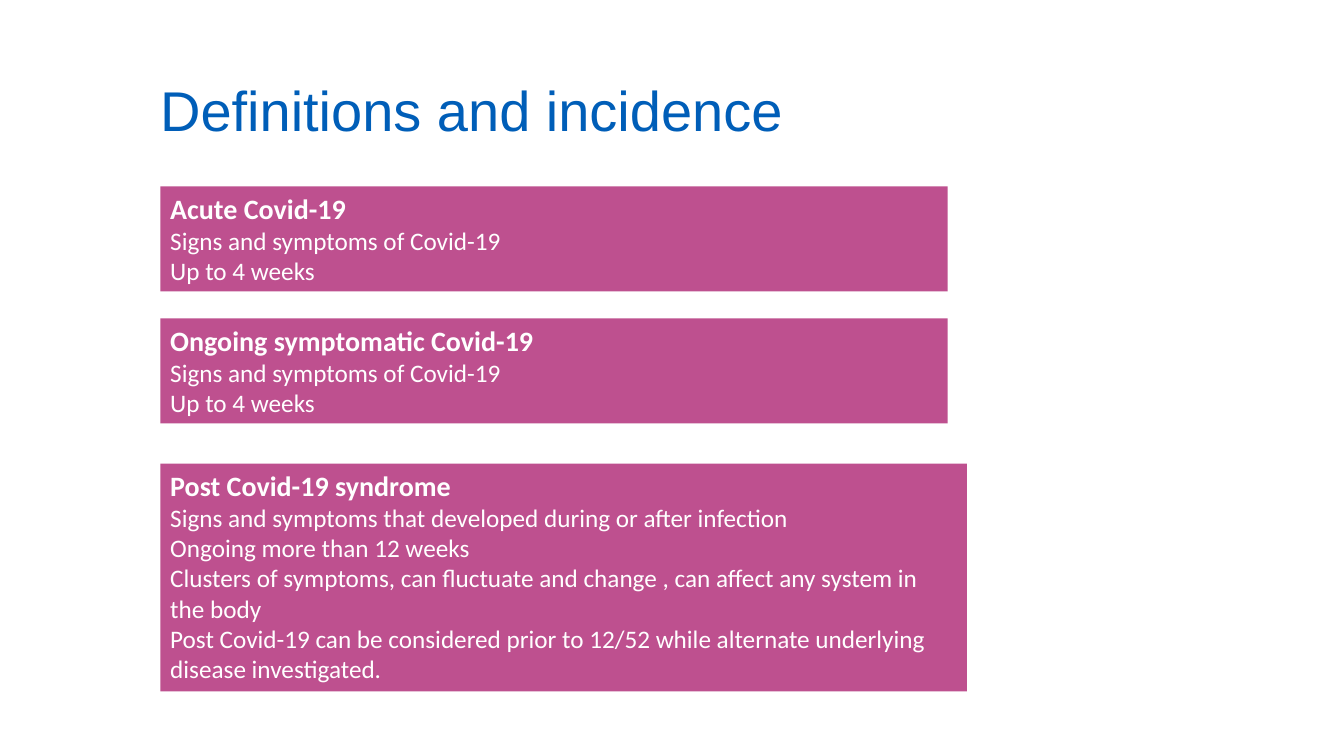
from dataclasses import dataclass

from pptx import Presentation
from pptx import util as u
from pptx.dml.color import RGBColor
from pptx.enum import shapes, text
from pptx.oxml.ns import qn
from lxml import etree

WIDTH, HEIGHT = u.Inches(13.33), u.Inches(7.5)
BLUE, MAGENTA, WHITE = "005EB8", "AE2573", "FFFFFF"
PANEL_OPACITY = 80  # percent
PANEL_LEFT = 11.93


@dataclass
class Panel:
    top: float
    width: float
    height: float
    heading: str
    details: list[str]


# The grid has 100 columns and 100 rows
PANELS = [
    Panel(24.67, 58.59, 13.87, "Acute Covid-19",
          ["Signs and symptoms of Covid-19", "Up to 4 weeks"]),
    Panel(42.13, 58.59, 13.87, "Ongoing symptomatic Covid-19",
          ["Signs and symptoms of Covid-19", "Up to 4 weeks"]),
    Panel(61.33, 60.02, 30.13, "Post Covid-19 syndrome",
          ["Signs and symptoms that developed during or after infection",
           "Ongoing more than 12 weeks",
           "Clusters of symptoms, can fluctuate and change , can affect any system in the body",
           "Post Covid-19 can be considered prior to 12/52 while alternate underlying "
           "disease investigated."]),
]


def color(value: str) -> RGBColor:
    return RGBColor.from_string(value)


def place(left: float, top: float, width: float, height: float) -> list[int]:
    """Turn columns and rows into slide lengths."""
    return [round(share * side / 100) for share, side in
            ((left, WIDTH), (top, HEIGHT), (width, WIDTH), (height, HEIGHT))]


def write(paragraph, words: str, *, size: float, font: str, fill: str, bold: bool = False) -> None:
    paragraph.alignment = text.PP_ALIGN.LEFT
    run = paragraph.add_run()
    run.text = words
    run.font.size = u.Pt(size)
    run.font.name = font
    run.font.bold = bold
    run.font.color.rgb = color(fill)


def draw_title(slide, words: str) -> None:
    shape = slide.shapes.add_textbox(*place(3.68, 5.33, 57.61, 19.33))
    frame = shape.text_frame
    frame.word_wrap = True
    frame.vertical_anchor = text.MSO_ANCHOR.MIDDLE
    paragraph = frame.paragraphs[0]
    paragraph.line_spacing = 0.9
    paragraph._p.get_or_add_pPr().set("marL", str(u.Inches(1)))
    write(paragraph, words, size=40, font="Arial", fill=BLUE)


def draw_panel(slide, panel: Panel) -> None:
    shape = slide.shapes.add_shape(
        shapes.MSO_SHAPE.RECTANGLE,
        *place(PANEL_LEFT, panel.top, panel.width, panel.height))
    shape.shadow.inherit = False
    shape.line.fill.background()
    shape.fill.solid()
    shape.fill.fore_color.rgb = color(MAGENTA)
    fill_color = shape._element.spPr.find(qn("a:solidFill"))[0]
    etree.SubElement(fill_color, qn("a:alpha")).set("val", str(PANEL_OPACITY * 1000))

    frame = shape.text_frame
    frame.word_wrap = True
    frame.auto_size = text.MSO_AUTO_SIZE.SHAPE_TO_FIT_TEXT
    frame.vertical_anchor = text.MSO_ANCHOR.TOP
    write(frame.paragraphs[0], panel.heading, size=20, font="Calibri", fill=WHITE, bold=True)
    for detail in panel.details:
        write(frame.add_paragraph(), detail, size=18, font="Calibri", fill=WHITE)


def main() -> None:
    presentation = Presentation()
    presentation.slide_width, presentation.slide_height = WIDTH, HEIGHT
    slide = presentation.slides.add_slide(presentation.slide_layouts[6])

    # Title, then one panel per definition
    draw_title(slide, "Definitions and incidence")
    for panel in PANELS:
        draw_panel(slide, panel)

    presentation.save("out.pptx")


if __name__ == "__main__":
    main()
